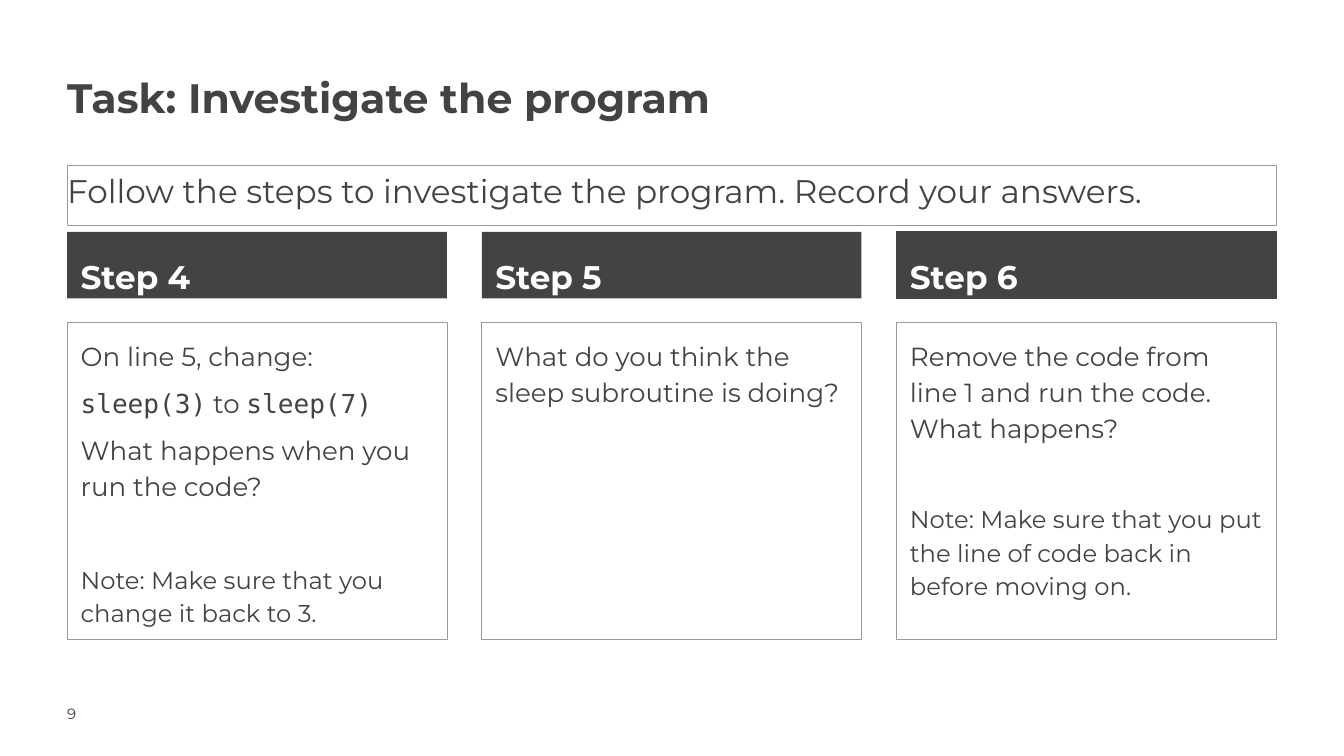
from pptx import Presentation
from pptx.dml.color import RGBColor
from pptx.enum.shapes import MSO_SHAPE as Shape
from pptx.enum.text import MSO_ANCHOR as Anchor, PP_ALIGN as Align
from pptx.util import Inches, Pt

DARK = RGBColor(0x43, 0x43, 0x43)
GREY = RGBColor(0x99, 0x99, 0x99)
WHITE = RGBColor(0xFF, 0xFF, 0xFF)
PLUM = RGBColor(0x4B, 0x32, 0x41)
SANS, MONO = "Montserrat", "DejaVu Sans Mono"

# Content: a paragraph is a list of (text, font) spans, size, space before, space after
TITLE = "Task: Investigate the program"
INTRO = "Follow the steps to investigate the program. Record your answers."
PAGE_NUMBER = "9"
STEPS = [
    ("Step 4", [
        ([("On line 5, change:", SANS)], 28, 0, 0),
        ([("sleep(3)", MONO), (" to ", SANS), ("sleep(7)", MONO)], 28, 12, 0),
        ([("What happens when you run the code?", SANS)], 28, 12, 0),
        ([("Note: Make sure that you change it back to 3.", SANS)], 26, 63, 12),
    ]),
    ("Step 5", [
        ([("What do you think the sleep subroutine is doing?", SANS)], 28, 0, 12),
    ]),
    ("Step 6", [
        ([("Remove the code from line 1 and run the code. What happens?", SANS)], 28, 0, 0),
        ([("Note: Make sure that you put the line of code back in before moving on.", SANS)],
         26, 60.5, 12),
    ]),
]

# Layout in inches
LEFT, COLUMN_WIDTH, COLUMN_PITCH = 1, 5.65, 6.17
HEAD_TOP, HEAD_HEIGHT = 3.45, 0.99
BODY_TOP, BODY_HEIGHT = 4.79, 4.72

deck = Presentation()
deck.slide_width, deck.slide_height = Inches(20), Inches(11.25)
page = deck.slides.add_slide(deck.slide_layouts[6])


def add_panel(left, top, width, height, fill=None, line=None):
    box = page.shapes.add_shape(Shape.RECTANGLE, Inches(left), Inches(top),
                                Inches(width), Inches(height))
    box.shadow.inherit = False
    if fill is None:
        box.fill.background()
    else:
        box.fill.solid()
        box.fill.fore_color.rgb = fill
    if line is None:
        box.line.fill.background()
    else:
        box.line.color.rgb = line
        box.line.width = Pt(0.75)
    return box


def add_label(left, top, width, height):
    return page.shapes.add_textbox(Inches(left), Inches(top), Inches(width), Inches(height))


def write(box, text, size=28, color=DARK, bold=False, spacing=1.15, inset=0, after=0):
    """Write a string, or a list of paragraphs made of spans, into a box."""
    frame = box.text_frame
    frame.word_wrap = True
    frame.vertical_anchor = Anchor.TOP
    frame.margin_left = frame.margin_right = Inches(inset)
    frame.margin_top = frame.margin_bottom = Inches(inset)
    paragraphs = [([(text, SANS)], size, 0, after)] if isinstance(text, str) else text
    for index, (spans, points, space_before, space_after) in enumerate(paragraphs):
        para = frame.add_paragraph() if index else frame.paragraphs[0]
        para.alignment = Align.LEFT
        para.line_spacing = spacing
        para.space_before, para.space_after = Pt(space_before), Pt(space_after)
        for words, font in spans:
            span = para.add_run()
            span.text = words
            span.font.name, span.font.size = font, Pt(points)
            span.font.bold, span.font.color.rgb = bold, color


# Introduction
write(add_panel(LEFT, 2.46, 18, 0.89, line=GREY), INTRO, size=35, after=20)

# Step columns
for column, (heading, paragraphs) in enumerate(STEPS):
    left = LEFT + column * COLUMN_PITCH
    outline = DARK if heading == "Step 6" else None
    head = add_panel(left, HEAD_TOP, COLUMN_WIDTH, HEAD_HEIGHT, fill=DARK, line=outline)
    write(head, heading, size=35, color=WHITE, bold=True, spacing=1.3, inset=0.2)
    body = add_panel(left, BODY_TOP, COLUMN_WIDTH, BODY_HEIGHT, line=GREY)
    write(body, paragraphs, inset=0.2)

# Title and page number
write(add_label(LEFT, 0.97, 14.44, 1.78), TITLE, size=44, bold=True)
write(add_label(LEFT, 10.48, 1.57, 0.39), PAGE_NUMBER, size=16, color=PLUM, spacing=1.0)

deck.save("out.pptx")
